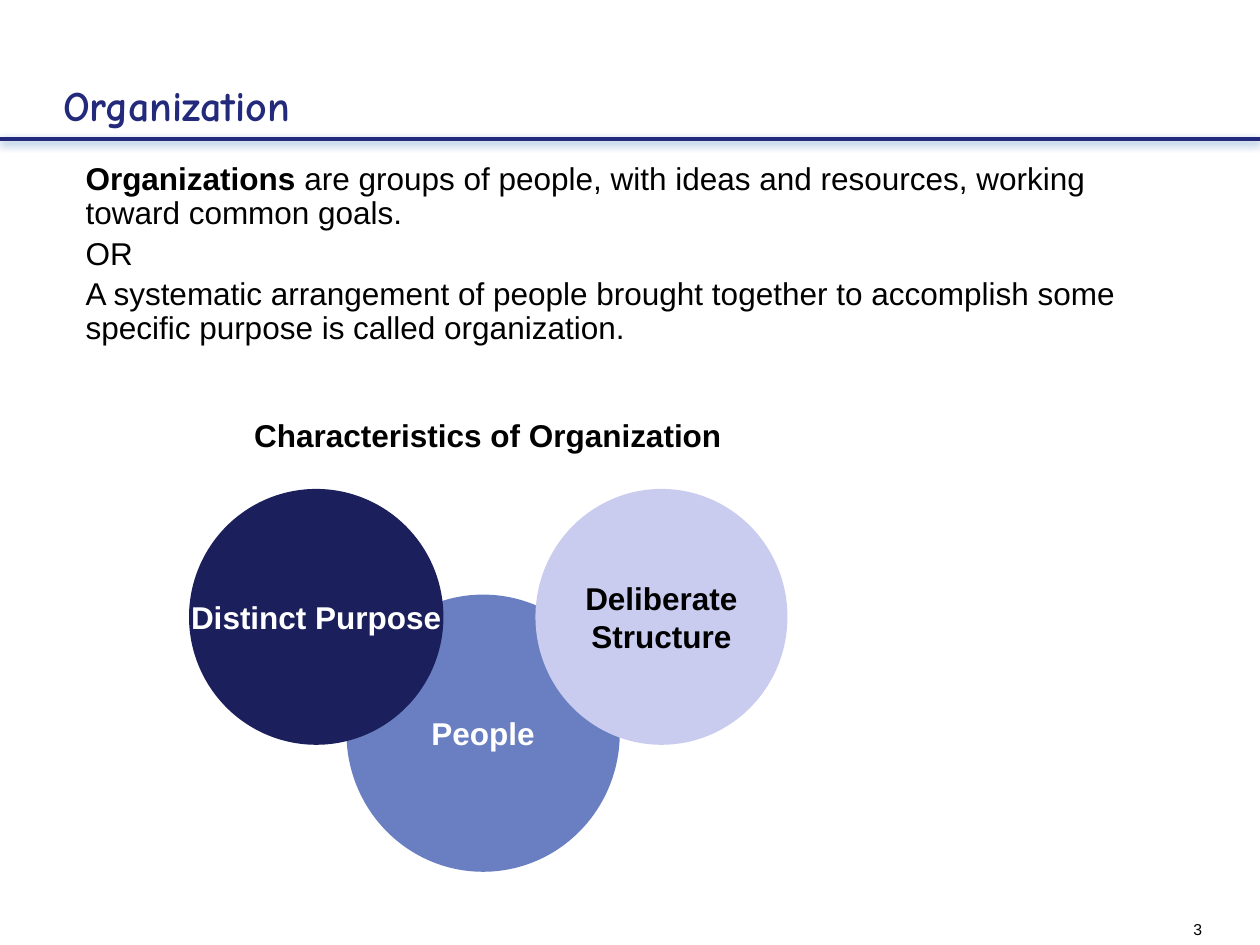
"""Build the Organization slide with its three overlapping circles."""
import pptx
import pptx.dml.color
import pptx.enum.shapes
import pptx.enum.text
import pptx.oxml
import pptx.util

Pt = pptx.util.Pt
ALIGN = pptx.enum.text.PP_ALIGN
ANCHOR = pptx.enum.text.MSO_ANCHOR
NAVY = "242A7B"
BLACK = "000000"
WHITE = "FFFFFF"
DRAWING = "http://schemas.openxmlformats.org/drawingml/2006/main"


def color(value):
    """Return the colour for a hex string."""
    return pptx.dml.color.RGBColor.from_string(value)


def write(frame, paragraphs, size=18, font="Arial", ink=BLACK, align=ALIGN.LEFT,
          line_spacing=None, gap=0):
    """Write paragraphs, each a list of (text, bold) spans, into a frame."""
    for index, spans in enumerate(paragraphs):
        para = frame.add_paragraph() if index else frame.paragraphs[0]
        para.alignment = align
        if line_spacing:
            para.line_spacing = line_spacing
        if index and gap:
            para.space_before = Pt(gap)
        for text, bold in spans:
            span = para.add_run()
            span.text = text
            span.font.size = Pt(size)
            span.font.name = font
            span.font.bold = bold
            span.font.color.rgb = color(ink)


def set_margins(frame, horizontal, vertical):
    """Set equal side margins and equal top and bottom margins."""
    frame.margin_left = frame.margin_right = Pt(horizontal)
    frame.margin_top = frame.margin_bottom = Pt(vertical)


def add_text(page, place, paragraphs, wrap=True, margins=(7.2, 3.6),
             anchor=ANCHOR.TOP, **style):
    """Add a text box at left, top, width, height."""
    box = page.shapes.add_textbox(*map(Pt, place))
    frame = box.text_frame
    frame.word_wrap = wrap
    frame.vertical_anchor = anchor
    set_margins(frame, *margins)
    write(frame, paragraphs, **style)


def add_circle(page, place, fill, ink, lines):
    """Add a filled ellipse with centred bold lines."""
    circle = page.shapes.add_shape(
        pptx.enum.shapes.MSO_SHAPE.OVAL, *map(Pt, place))
    circle.shadow.inherit = False
    circle.fill.solid()
    circle.fill.fore_color.rgb = color(fill)
    circle.line.fill.background()
    frame = circle.text_frame
    frame.word_wrap = False
    frame.vertical_anchor = ANCHOR.MIDDLE
    set_margins(frame, 7.2, 3.6)
    write(frame, [[(line, True)] for line in lines], ink=ink, align=ALIGN.CENTER)


def add_rule(page, top, width):
    """Add the full-width title rule with its soft shadow."""
    rule = page.shapes.add_connector(
        pptx.enum.shapes.MSO_CONNECTOR.STRAIGHT, Pt(width), Pt(top), Pt(0), Pt(top))
    rule.line.color.rgb = color(NAVY)
    rule.line.width = Pt(2.25)
    rule._element.spPr.append(pptx.oxml.parse_xml(
        f'<a:effectLst xmlns:a="{DRAWING}">'
        f'<a:outerShdw blurRad="{Pt(5)}" dist="{Pt(2.1)}" dir="5400000" rotWithShape="0">'
        '<a:srgbClr val="5B8DC6"><a:alpha val="75000"/></a:srgbClr>'
        '</a:outerShdw></a:effectLst>'))


def main():
    """Build and save the slide."""
    deck = pptx.Presentation()
    deck.slide_width, deck.slide_height = Pt(720), Pt(540)
    page = deck.slides.add_slide(deck.slide_layouts[6])

    add_text(page, (673.2, 525.6, 13.7, 10.8), [[("3", False)]], wrap=False,
             margins=(0, 0), size=9, align=ALIGN.RIGHT)
    add_rule(page, 79.2, 720)
    add_text(page, (36, 0, 642.2, 77.8), [[("Organization", True)]],
             margins=(0, 3.6), anchor=ANCHOR.BOTTOM, size=24,
             font="Comic Neue", ink=NAVY)
    add_text(page, (41.8, 90, 642.2, 138.2), [
        [("Organizations", True),
         (" are groups of people, with ideas and resources, working toward "
          "common goals.", False)],
        [("OR", False)],
        [("A systematic arrangement of people brought together to accomplish "
          "some specific purpose is called organization.", False)],
    ], line_spacing=0.9, gap=3.6)

    add_circle(page, (198, 339.8, 156.2, 158.4), "6A7FC1", WHITE, ["People"])
    add_circle(page, (306, 279.4, 144, 146.2), "C9CBEF", BLACK,
               ["Deliberate", "Structure"])
    add_circle(page, (108, 279.4, 145.4, 146.2), "1B1F5C", WHITE,
               ["Distinct Purpose"])
    add_text(page, (138.2, 234, 284.4, 28.8),
             [[("Characteristics of Organization", True)]], wrap=False)
    deck.save("out.pptx")


if __name__ == "__main__":
    main()
